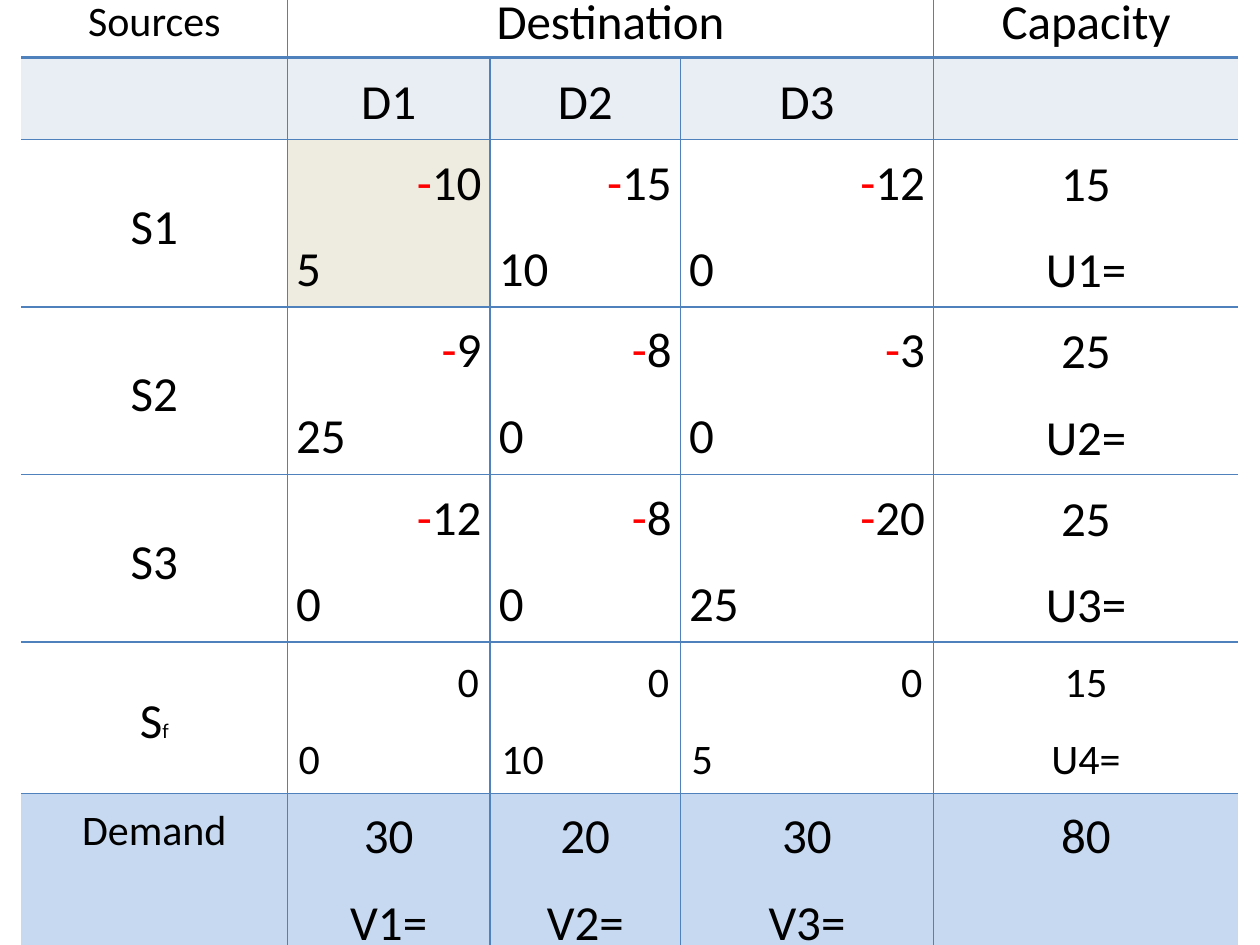
from dataclasses import dataclass
from typing import Optional

from lxml import etree
from pptx import Presentation
from pptx import util as u
from pptx.dml.color import RGBColor
from pptx.enum import text
from pptx.oxml.ns import qn

BLACK = RGBColor(0, 0, 0)
RED = RGBColor(0xFF, 0, 0)
BLUE = RGBColor(0x4F, 0x81, 0xBD)
PALE = RGBColor(0xE9, 0xED, 0xF4)
SKY = RGBColor(0xC6, 0xD9, 0xF1)
SAND = RGBColor(0xEE, 0xEC, 0xE1)
WHITE = RGBColor(0xFF, 0xFF, 0xFF)

MID = text.PP_ALIGN.CENTER
LEFT = text.PP_ALIGN.LEFT
RIGHT = text.PP_ALIGN.RIGHT
COLS = (2.11, 1.61, 1.51, 2.01, 2.42)
THIN, THICK = 1, 2.25


@dataclass
class Row:
    """One row of the transport table, cell lines split by a bar."""
    high: float
    cells: tuple[str, ...]
    fill: Optional[RGBColor] = None
    size: float = 28
    head: float = 28
    pad: float = 0.07
    costs: bool = False
    top: bool = False


ROWS = (
    Row(0.61, ("Sources", "Destination", "", "", "Capacity"), head=24),
    Row(0.65, ("", "D1", "D2", "D3", ""), PALE),
    Row(1.33, ("S1", "-10|5", "-15|10", "-12|0", "15|U1="), costs=True),
    Row(1.33, ("S2", "-9|25", "-8|0", "-3|0", "25|U2="), costs=True),
    Row(1.33, ("S3", "-12|0", "-8|0", "-20|25", "25|U3="), WHITE, costs=True),
    Row(1.2, ("S", "0|0", "0|10", "0|5", "15|U4="), WHITE, 24, pad=0.09,
        costs=True),
    Row(0.76, ("Demand", "30|V1=", "20|V2=", "30|V3=", "80"), SKY, head=24,
        top=True),
)


def add_run(para, words: str, size: float, color: RGBColor = BLACK) -> None:
    """Add a run of text in the table font."""
    run = para.add_run()
    run.text = words
    run.font.name = "Calibri"
    run.font.size = u.Pt(size)
    run.font.color.rgb = color


def add_edge(cell, side: str, width: float) -> None:
    """Give one side of a cell a blue line, or none at zero width."""
    props = cell._tc.get_or_add_tcPr()
    line = etree.SubElement(props, qn(f"a:ln{side}"), w=str(u.Pt(width)))
    if not width:
        etree.SubElement(line, qn("a:noFill"))
        return
    fill = etree.SubElement(line, qn("a:solidFill"))
    etree.SubElement(fill, qn("a:srgbClr"), val=str(BLUE))


def rule_cell(cell, r: int, c: int) -> None:
    """Rule the inner edges of a cell, with a thick line under the header."""
    last = len(COLS) - 1
    add_edge(cell, "L", THIN if c else 0)
    add_edge(cell, "R", THIN if c < last else 0)
    add_edge(cell, "T", (0, THICK)[r] if r < 2 else THIN)
    add_edge(cell, "B", THICK if r == 0 else THIN if r < len(ROWS) - 1 else 0)


def fill_cell(cell, row: Row, c: int) -> None:
    """Write the lines of a cell, with costs right and amounts left."""
    cost = row.costs and 0 < c < len(COLS) - 1
    cell.margin_left = cell.margin_right = u.Inches(row.pad)
    cell.margin_top = cell.margin_bottom = u.Inches(0.04)
    high = row.top or (cost and row.size == 28)
    anchor = text.MSO_ANCHOR
    cell.vertical_anchor = anchor.TOP if high else anchor.MIDDLE
    if not row.cells[c]:
        return
    size = row.size if c else row.head
    frame = cell.text_frame
    for i, words in enumerate(row.cells[c].split("|")):
        para = frame.add_paragraph() if i else frame.paragraphs[0]
        para.alignment = (RIGHT, LEFT)[i] if cost else MID
        para.line_spacing = 1.15
        para.space_after = u.Pt(10)
        if words.startswith("-"):
            add_run(para, "-", size, RED)
        add_run(para, words.removeprefix("-"), size)


def paint_cell(cell, color: Optional[RGBColor]) -> None:
    """Fill a cell with a colour, or leave it clear."""
    if color is None:
        cell.fill.background()
    else:
        cell.fill.solid()
        cell.fill.fore_color.rgb = color


def add_grid(slide) -> None:
    """Build the transport table."""
    high = sum(row.high for row in ROWS)
    grid = slide.shapes.add_table(
        len(ROWS), len(COLS), u.Inches(0.17), u.Inches(-0.17),
        u.Inches(sum(COLS)), u.Inches(high)).table
    grid.first_row = grid.horz_banding = False
    for col, wide in zip(grid.columns, COLS):
        col.width = u.Inches(wide)
    grid.cell(0, 1).merge(grid.cell(0, 3))
    for r, row in enumerate(ROWS):
        grid.rows[r].height = u.Inches(row.high)
        for c in range(len(COLS)):
            cell = grid.cell(r, c)
            if cell.is_spanned:
                continue
            fill_cell(cell, row, c)
            rule_cell(cell, r, c)
            paint_cell(cell, SAND if (r, c) == (2, 1) else row.fill)
    add_run(grid.cell(5, 0).text_frame.paragraphs[0], "f", 12)


def main() -> None:
    """Build and save the slide."""
    deck = Presentation()
    deck.slide_width, deck.slide_height = u.Inches(10), u.Inches(7.5)
    add_grid(deck.slides.add_slide(deck.slide_layouts[6]))
    deck.save("out.pptx")


if __name__ == "__main__":
    main()
